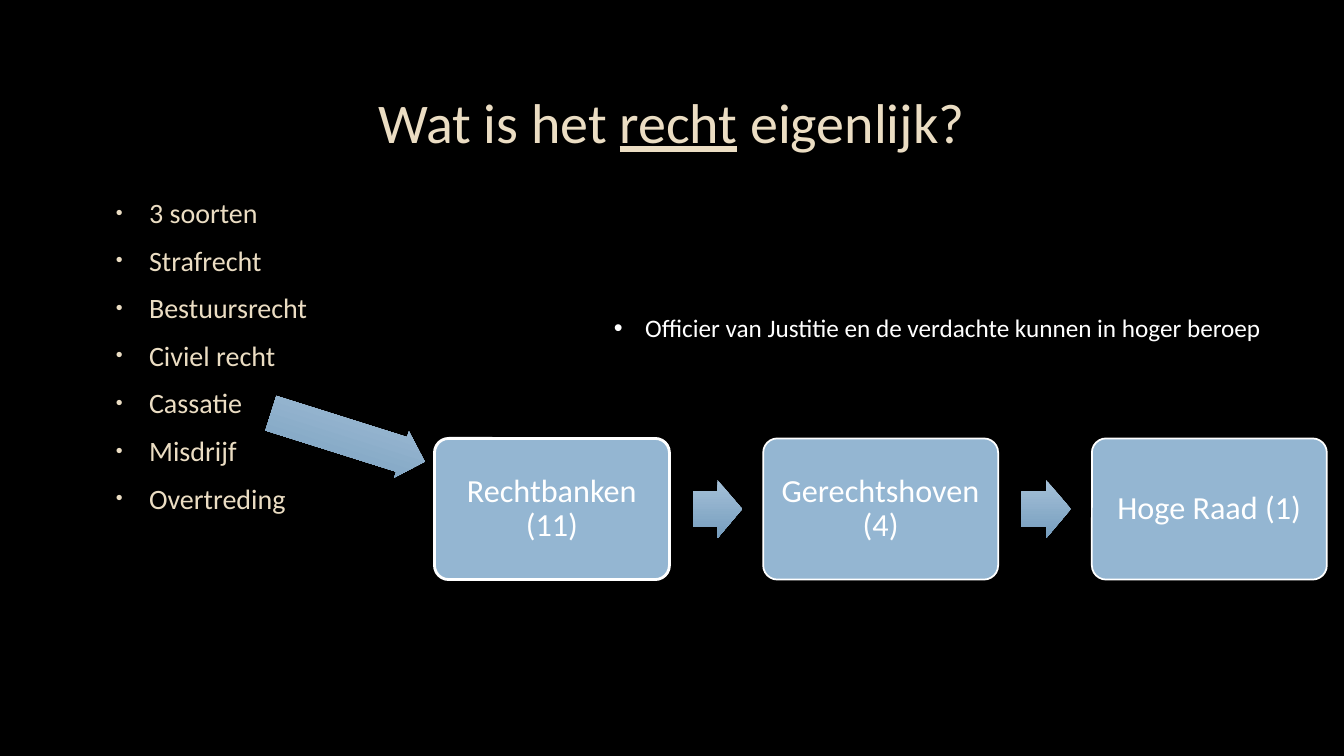
"""Build a slide on Dutch law with a list of terms and a chain of courts."""
from dataclasses import dataclass
from typing import Any

from lxml.etree import SubElement
from pptx import Presentation
from pptx.dml.color import RGBColor
from pptx.enum.shapes import MSO_SHAPE as Preset
from pptx.enum.text import MSO_ANCHOR as Anchor, PP_ALIGN as Align
from pptx.oxml.ns import qn
from pptx.util import Inches, Pt


@dataclass(frozen=True)
class Theme:
    font: str = "Calibri"
    background: RGBColor = RGBColor(0x00, 0x00, 0x00)
    sand: RGBColor = RGBColor(0xEB, 0xDD, 0xC3)
    white: RGBColor = RGBColor(0xFF, 0xFF, 0xFF)
    court: RGBColor = RGBColor(0x94, 0xB6, 0xD2)
    arrow_top: RGBColor = RGBColor(0xA5, 0xC1, 0xD8)
    arrow_bottom: RGBColor = RGBColor(0x76, 0x9D, 0xBE)
    outline: str = "404040"
    title_size: int = 40
    term_size: int = 20
    note_size: int = 18
    court_size: int = 23


@dataclass(frozen=True)
class Frame:
    left: float
    top: float
    width: float
    height: float

    def lengths(self) -> tuple:
        return tuple(map(Inches, (self.left, self.top, self.width, self.height)))


@dataclass(frozen=True)
class Court:
    name: str
    frame: Frame
    line_width: float


@dataclass(frozen=True)
class Arrow:
    frame: Frame
    shaft: float
    rotation: float = 0


@dataclass(frozen=True)
class BulletList:
    items: tuple
    frame: Frame
    size: int
    color: RGBColor
    indent: float
    hanging: float
    spacing: dict
    bullet_percent: int = 100
    outlined: bool = False


THEME = Theme()
PITCH = 3.26
TITLE_FRAME = Frame(1, 0.67, 11.32, 1.06)
TITLE_PARTS = (("Wat is het ", False), ("recht", True), (" eigenlijk?", False))
LISTS = (
    BulletList(
        ("3 soorten", "Strafrecht", "Bestuursrecht", "Civiel recht",
         "Cassatie", "Misdrijf", "Overtreding"),
        Frame(1, 1.89, 11.32, 4.44), THEME.term_size, THEME.sand, 0.38, 0.33,
        {"space_before": Pt(4), "space_after": Pt(6)}, 70, True,
    ),
    BulletList(
        ("Officier van Justitie en de verdachte kunnen in hoger beroep",),
        Frame(5.99, 3.05, 7.09, 0.71), THEME.note_size, THEME.white, 0.31, 0.31, {},
    ),
)
COURTS = tuple(
    Court(name, Frame(4.31 + PITCH * index, 4.35, 2.33, 1.4), line_width)
    for index, (name, line_width) in enumerate(
        (("Rechtbanken (11)", 2), ("Gerechtshoven (4)", 1.25), ("Hoge Raad (1)", 1.25))
    )
)
ARROWS = tuple(
    Arrow(Frame(6.87 + PITCH * index, 4.76, 0.49, 0.58), 0.6)
    for index in range(len(COURTS) - 1)
) + (Arrow(Frame(2.65, 4.1, 1.6, 0.48), 0.75, 17.5),)


def apply(target: Any, values: dict) -> None:
    for name, value in values.items():
        setattr(target, name, value)


def add_span(para: Any, text: str, size: int, color: RGBColor,
             underline: bool = False, outlined: bool = False) -> None:
    span = para.add_run()
    span.text = text
    apply(span.font, {"name": THEME.font, "size": Pt(size), "underline": underline})
    span.font.color.rgb = color
    if outlined:
        properties = span.font._element
        line = SubElement(properties, qn("a:ln"), w=str(Pt(0.75)))
        fill = SubElement(line, qn("a:solidFill"))
        tone = SubElement(fill, qn("a:srgbClr"), val=THEME.outline)
        SubElement(tone, qn("a:alpha"), val="10000")
        properties.insert(0, line)


def add_title(page: Any) -> None:
    box = page.shapes.title
    apply(box, dict(zip(("left", "top", "width", "height"), TITLE_FRAME.lengths())))
    box.text_frame.vertical_anchor = Anchor.MIDDLE
    para = box.text_frame.paragraphs[0]
    para.alignment = Align.CENTER
    for text, underline in TITLE_PARTS:
        add_span(para, text, THEME.title_size, THEME.sand, underline, True)


def add_list(page: Any, block: BulletList) -> None:
    frame = page.shapes.add_textbox(*block.frame.lengths()).text_frame
    frame.word_wrap = True
    for index, item in enumerate(block.items):
        para = frame.add_paragraph() if index else frame.paragraphs[0]
        apply(para, block.spacing)
        properties = para._p.get_or_add_pPr()
        properties.set("marL", str(Inches(block.indent)))
        properties.set("indent", str(-Inches(block.hanging)))
        tone = SubElement(properties, qn("a:buClr"))
        SubElement(tone, qn("a:srgbClr"), val=str(block.color))
        SubElement(properties, qn("a:buSzPct"), val=str(block.bullet_percent * 1000))
        SubElement(properties, qn("a:buFont"), typeface="Arial")
        SubElement(properties, qn("a:buChar"), char="•")
        add_span(para, item, block.size, block.color, outlined=block.outlined)


def add_court(page: Any, court: Court) -> None:
    box = page.shapes.add_shape(Preset.ROUNDED_RECTANGLE, *court.frame.lengths())
    box.shadow.inherit = False
    box.adjustments[0] = 0.1
    box.fill.solid()
    box.fill.fore_color.rgb = THEME.court
    box.line.color.rgb = THEME.white
    box.line.width = Pt(court.line_width)
    sides = ("margin_left", "margin_right", "margin_top", "margin_bottom")
    apply(box.text_frame, {"word_wrap": True, "vertical_anchor": Anchor.MIDDLE}
          | dict.fromkeys(sides, Inches(0.14)))
    para = box.text_frame.paragraphs[0]
    apply(para, {"alignment": Align.CENTER, "line_spacing": 0.9})
    add_span(para, court.name, THEME.court_size, THEME.white)


def add_arrow(page: Any, arrow: Arrow) -> None:
    shape = page.shapes.add_shape(Preset.RIGHT_ARROW, *arrow.frame.lengths())
    shape.shadow.inherit = False
    shape.rotation = arrow.rotation
    shape.adjustments[0] = arrow.shaft
    shape.adjustments[1] = 0.5
    shape.line.fill.background()
    shape.fill.gradient()
    shape.fill.gradient_angle = 270
    for stop, color in zip(shape.fill.gradient_stops,
                           (THEME.arrow_top, THEME.arrow_bottom)):
        stop.color.rgb = color


def main() -> None:
    deck = Presentation()
    apply(deck, {"slide_width": Inches(13.33), "slide_height": Inches(7.5)})
    page = deck.slides.add_slide(deck.slide_layouts.get_by_name("Title Only"))
    page.background.fill.solid()
    page.background.fill.fore_color.rgb = THEME.background
    add_title(page)
    for block in LISTS:
        add_list(page, block)
    for court in COURTS:
        add_court(page, court)
    for arrow in ARROWS:
        add_arrow(page, arrow)
    deck.save("out.pptx")


if __name__ == "__main__":
    main()
